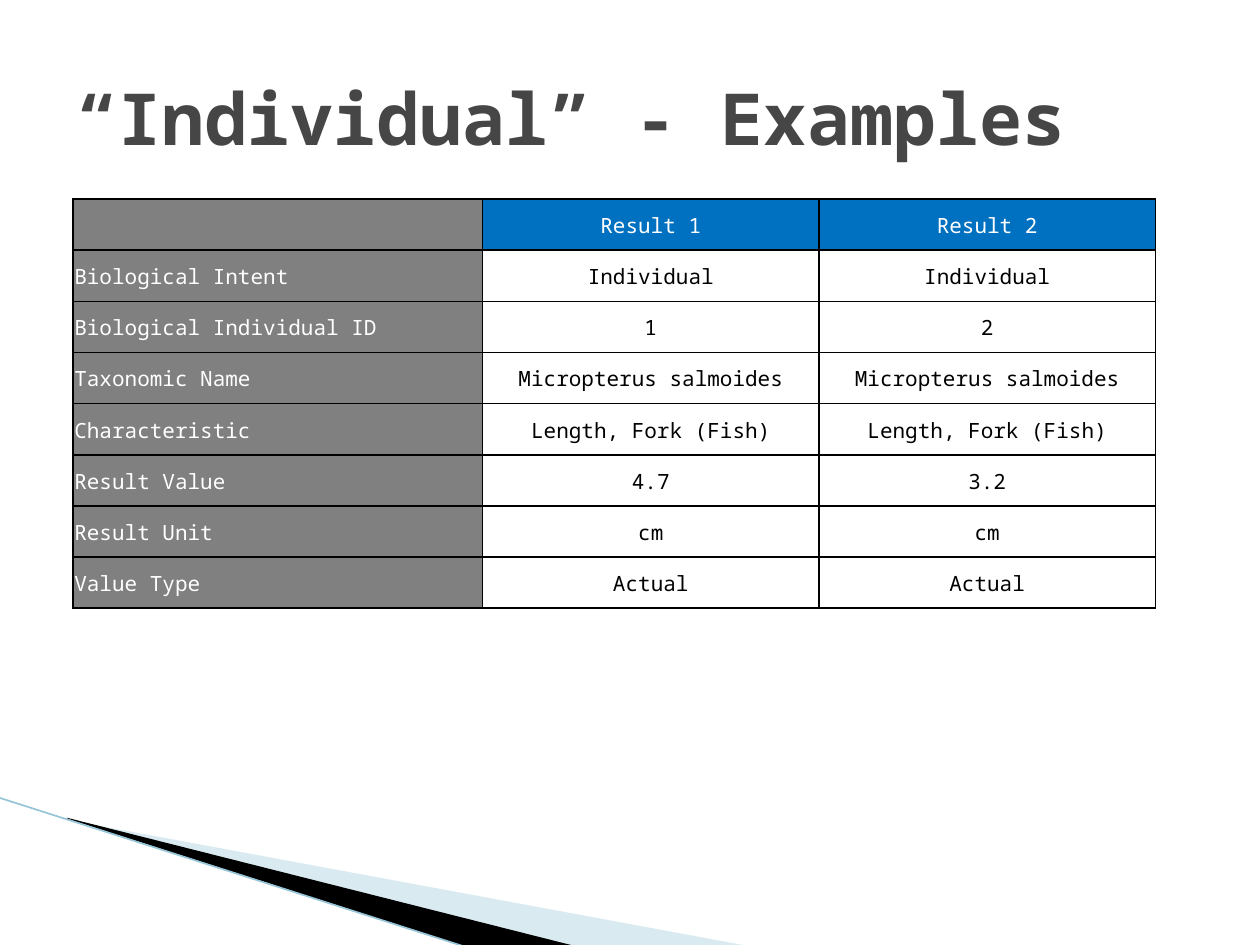
from lxml.etree import SubElement
from pptx import Presentation
from pptx.dml.color import RGBColor as RGB
from pptx.enum.shapes import MSO_CONNECTOR as CONN
from pptx.enum.text import MSO_ANCHOR as ANCHOR, PP_ALIGN as ALIGN
from pptx.oxml.ns import qn
from pptx.util import Inches, Pt

TITLE = "“Individual” - Examples"
ROWS = [
    ("", "Result 1", "Result 2"),
    ("Biological Intent", "Individual", "Individual"),
    ("Biological Individual ID", "1", "2"),
    ("Taxonomic Name", "Micropterus salmoides", "Micropterus salmoides"),
    ("Characteristic", "Length, Fork (Fish)", "Length, Fork (Fish)"),
    ("Result Value", "4.7", "3.2"),
    ("Result Unit", "cm", "cm"),
    ("Value Type", "Actual", "Actual"),
]
COL_WIDTHS = (3.25, 2.67, 2.67)
TABLE_LEFT, TABLE_TOP, TABLE_HEIGHT = 0.58, 1.58, 3.25
PALE_WEDGE = [(0.55, 6.51), (5.95, 7.51), (4.56, 7.51), (0.55, 6.5)]
DARK_WEDGE = [(0.53, 6.49), (4.57, 7.51), (3.72, 7.52), (0.54, 6.5)]
EDGE = (-0.01, 6.33, 3.71, 7.52)
THEME = {
    "font": "Noto Sans Mono", "title_size": 41, "cell_size": 12,
    "title": "464646", "light": "FFFFFF", "dark": "000000",
    "label": "808080", "header": "0070C0",
    "pale": "A0CBDC", "edge": "97C5D8",
}


def color(name):
    return RGB.from_string(THEME[name])


def style(p, size, name, bold=False):
    for r in p.runs:
        r.font.name = THEME["font"]
        r.font.size = Pt(THEME[size])
        r.font.bold = bold
        r.font.color.rgb = color(name)


def add_wedge(s, points, name, alpha=None):
    (x, y), *rest = [(Inches(a), Inches(b)) for a, b in points]
    builder = s.shapes.build_freeform(x, y)
    builder.add_line_segments(rest, close=True)
    sp = builder.convert_to_shape()
    sp.shadow.inherit = False
    sp.fill.solid()
    sp.fill.fore_color.rgb = color(name)
    sp.line.fill.background()
    if alpha:
        clr = sp._element.spPr.find(qn("a:solidFill"))[0]
        SubElement(clr, qn("a:alpha"), val=str(alpha * 1000))


def add_edge(s):
    line = s.shapes.add_connector(CONN.STRAIGHT, *map(Inches, EDGE))
    line.line.color.rgb = color("edge")
    line.line.width = Pt(0.95)
    SubElement(line._element.spPr, qn("a:effectLst"))


def add_title(s):
    sp = s.shapes.add_textbox(Inches(0.5), Inches(0.3), Inches(9), Inches(1.25))
    tf = sp.text_frame
    tf.word_wrap = True
    tf.vertical_anchor = ANCHOR.MIDDLE
    tf.text = TITLE
    style(tf.paragraphs[0], "title_size", "title", bold=True)


def add_borders(cell):
    tc_pr = cell._tc.get_or_add_tcPr()
    for side in ("lnL", "lnR", "lnT", "lnB"):
        ln = SubElement(tc_pr, qn(f"a:{side}"), w=str(Pt(1)))
        fill = SubElement(ln, qn("a:solidFill"))
        SubElement(fill, qn("a:srgbClr"), val=THEME["dark"])


def fill_cell(cell, text, row, col):
    fill = "label" if col == 0 else "header" if row == 0 else None
    cell.margin_left = cell.margin_right = cell.margin_top = Inches(0.01)
    cell.margin_bottom = 0
    cell.vertical_anchor = ANCHOR.MIDDLE
    add_borders(cell)
    if fill:
        cell.fill.solid()
        cell.fill.fore_color.rgb = color(fill)
    else:
        cell.fill.background()
    cell.text = text
    p = cell.text_frame.paragraphs[0]
    p.alignment = ALIGN.CENTER if col else ALIGN.LEFT
    style(p, "cell_size", "light" if fill else "dark")


def add_results(s):
    table = s.shapes.add_table(
        len(ROWS), len(COL_WIDTHS), Inches(TABLE_LEFT), Inches(TABLE_TOP),
        Inches(sum(COL_WIDTHS)), Inches(TABLE_HEIGHT)).table
    table.horz_banding = False
    for column, width in zip(table.columns, COL_WIDTHS):
        column.width = Inches(width)
    for i, row in enumerate(ROWS):
        for j, text in enumerate(row):
            fill_cell(table.cell(i, j), text, i, j)


def main():
    """Build the slide of individual result examples."""
    prs = Presentation()
    prs.slide_width, prs.slide_height = Inches(10), Inches(7.5)
    s = prs.slides.add_slide(prs.slide_layouts[6])
    add_wedge(s, PALE_WEDGE, "pale", alpha=40)
    add_wedge(s, DARK_WEDGE, "dark")
    add_edge(s)
    add_title(s)
    add_results(s)
    prs.save("out.pptx")


if __name__ == "__main__":
    main()
